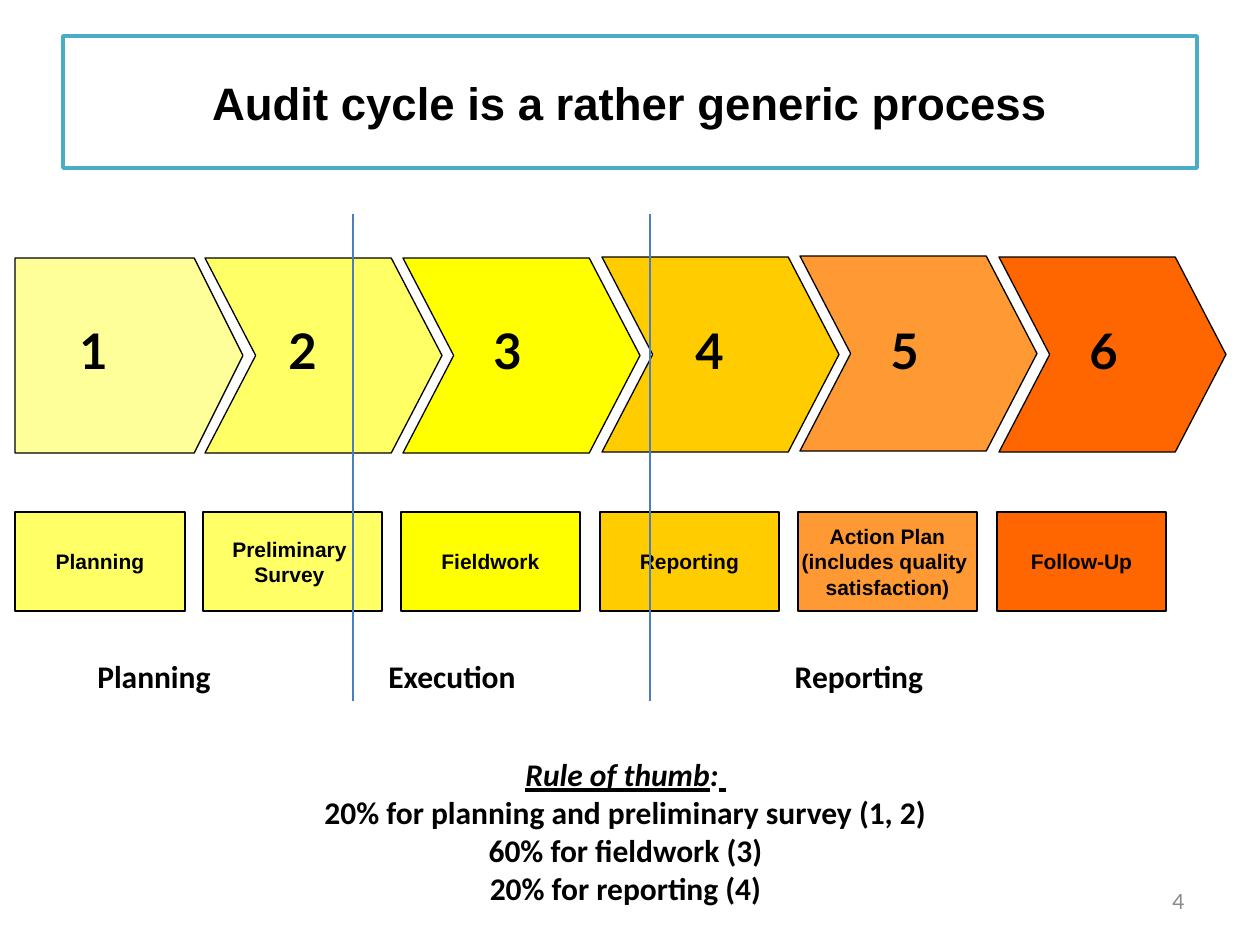
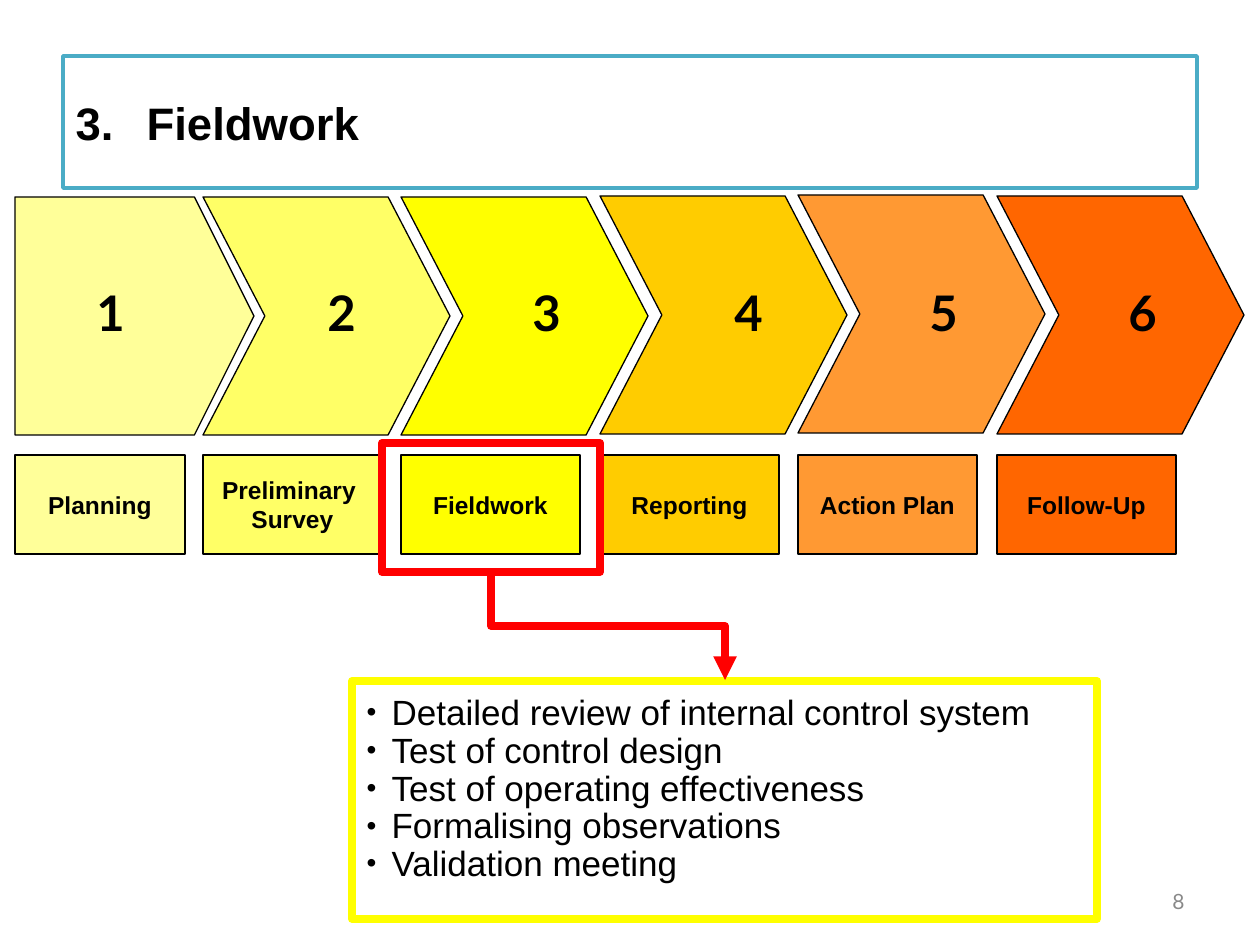
from dataclasses import dataclass
from typing import NamedTuple

from lxml.etree import SubElement
from pptx import Presentation
from pptx.dml.color import RGBColor
from pptx.enum.shapes import MSO_CONNECTOR as CONN, MSO_SHAPE as SHAPE
from pptx.enum.text import MSO_ANCHOR as ANCHOR, MSO_AUTO_SIZE as AUTO, PP_ALIGN as ALIGN
from pptx.oxml.ns import qn
from pptx.util import Emu, Pt

BLACK = RGBColor(0x00, 0x00, 0x00)
WHITE = RGBColor(0xFF, 0xFF, 0xFF)
GREY = RGBColor(0x89, 0x89, 0x89)
TEAL = RGBColor(0x4B, 0xAC, 0xC6)
BLUE = RGBColor(0x4B, 0x7E, 0xBC)
RED = RGBColor(0xFF, 0x00, 0x00)
YELLOW = RGBColor(0xFF, 0xFF, 0x00)
CREAM = RGBColor(0xFF, 0xFF, 0x99)
LEMON = RGBColor(0xFF, 0xFF, 0x66)
GOLD = RGBColor(0xFF, 0xCC, 0x00)
ORANGE = RGBColor(0xFF, 0x99, 0x33)
DEEP_ORANGE = RGBColor(0xFF, 0x66, 0x00)

EMU_PER_PX = 914400 / 126
TITLE_FONT = {"name": "Arial", "size": Pt(26), "bold": True}
NUMBER_FONT = {"name": "Lato", "size": Pt(28), "bold": True}
PAGE_FONT = {"name": "Lato", "size": Pt(12)}
PHASE_FONT = {"name": "Calibri", "size": Pt(18), "bold": True}
LIST_FONT = {"name": "Arial", "size": Pt(20)}


class Box(NamedTuple):
    left: int
    top: int
    width: int
    height: int


class Stage(NamedTuple):
    fill: RGBColor
    number_left: int
    rise: int = 0


@dataclass
class Flow:
    arrow_top: int
    arrow_height: int
    arrow_left: int
    arrow_widths: list[int]
    number_top: int
    number_shifts: list[int]
    label_top: int
    label_size: int
    last_label_width: int
    first_label_fill: RGBColor
    labels: list[list[str]]


STAGES = [
    Stage(CREAM, 67),
    Stage(LEMON, 276),
    Stage(YELLOW, 481),
    Stage(GOLD, 683, 1),
    Stage(ORANGE, 878, 2),
    Stage(DEEP_ORANGE, 1077, 1),
]


def px(value: float) -> Emu:
    return Emu(round(value * EMU_PER_PX))


def apply(target, values: dict) -> None:
    for name, value in values.items():
        setattr(target, name, value)


def place(sp, box: Box) -> None:
    apply(sp, {name: px(value) for name, value in box._asdict().items()})


def add_run(p, text: str, font: dict, color: RGBColor = BLACK) -> None:
    r = p.add_run()
    r.text = text
    apply(r.font, font)
    r.font.color.rgb = color


def write(tf, lines: list[str], font: dict, align=ALIGN.CENTER, color: RGBColor = BLACK) -> None:
    for i, line in enumerate(lines):
        p = tf.add_paragraph() if i else tf.paragraphs[0]
        p.alignment = align
        add_run(p, line, font, color)


def paint(sp, fill: RGBColor | None, line: RGBColor, width: float) -> None:
    if fill is None:
        sp.fill.background()
    else:
        sp.fill.solid()
        sp.fill.fore_color.rgb = fill
    sp.line.color.rgb = line
    sp.line.width = Pt(width)


def add_block(s, kind, box: Box, fill: RGBColor | None, line: RGBColor = BLACK, width: float = 0.75):
    sp = s.shapes.add_shape(kind, *map(px, box))
    sp.shadow.inherit = False
    paint(sp, fill, line, width)
    return sp


def add_text(s, box: Box, lines: list[str], font: dict, align=ALIGN.CENTER, color: RGBColor = BLACK, **frame):
    tf = s.shapes.add_textbox(*map(px, box)).text_frame
    apply(tf, {"word_wrap": True, **frame})
    write(tf, lines, font, align, color)
    return tf


def add_line(s, kind, start: tuple[int, int], end: tuple[int, int], color: RGBColor, width: float):
    cxn = s.shapes.add_connector(kind, *map(px, start + end))
    cxn.line.color.rgb = color
    cxn.line.width = Pt(width)
    SubElement(cxn._element.spPr, qn("a:effectLst"))
    return cxn


def add_down_elbow(s, start: tuple[int, int], end: tuple[int, int], color: RGBColor, width: float) -> None:
    mid_x, mid_y = (start[0] + end[0]) // 2, (start[1] + end[1]) // 2
    half_run, half_drop = (end[0] - start[0]) // 2, (end[1] - start[1]) // 2
    cxn = add_line(s, CONN.ELBOW, (mid_x + half_drop, mid_y - half_run),
                   (mid_x - half_drop, mid_y + half_run), color, width)
    cxn._element.spPr.find(qn("a:xfrm")).set("rot", "16200000")
    SubElement(cxn.line._get_or_add_ln(), qn("a:tailEnd"), type="triangle")


def set_bullet(p, indent: int, tag: str, size: str | None = None, **attrs: str) -> None:
    pPr = p._p.get_or_add_pPr()
    pPr.set("marL", str(px(indent)))
    pPr.set("indent", str(-px(indent)))
    if size:
        SubElement(pPr, qn("a:buSzPct"), val=size)
    SubElement(pPr, qn(tag), **attrs)


def start_slide(prs, layout: int, title: str, title_top: int, page: str, align):
    s = prs.slides.add_slide(prs.slide_layouts[layout])
    sp = s.shapes.title
    place(sp, Box(63, title_top, 1134, 132))
    paint(sp, WHITE, TEAL, 2)
    apply(sp.text_frame, {"auto_size": AUTO.NONE, "vertical_anchor": ANCHOR.MIDDLE})
    write(sp.text_frame, [title], TITLE_FONT, align)
    add_text(s, Box(903, 876, 294, 50), [page], PAGE_FONT, ALIGN.RIGHT, GREY,
             vertical_anchor=ANCHOR.MIDDLE)
    return s


def draw_flow(s, flow: Flow) -> None:
    label_font = {"name": "Arial", "size": Pt(flow.label_size), "bold": True}
    label_widths = [170, 179, 179, 179, 179, flow.last_label_width]
    for i, stage in enumerate(STAGES):
        step = 397 * (i - 1) // 2
        arrow_left, label_left = (flow.arrow_left + step, 203 + step) if i else (15, 15)
        arrow = add_block(s, SHAPE.CHEVRON if i else SHAPE.PENTAGON,
                          Box(arrow_left, flow.arrow_top - stage.rise, flow.arrow_widths[i], flow.arrow_height),
                          stage.fill)
        arrow.adjustments[0] = 0.26 if i else 0.25
        label = add_block(s, SHAPE.RECTANGLE, Box(label_left, flow.label_top, label_widths[i], 99),
                          stage.fill if i else flow.first_label_fill)
        apply(label.text_frame, {"word_wrap": False, "vertical_anchor": ANCHOR.MIDDLE})
        write(label.text_frame, flow.labels[i], label_font)
        add_text(s, Box(stage.number_left + flow.number_shifts[i], flow.number_top, 57, 72), [str(i + 1)],
                 NUMBER_FONT, ALIGN.LEFT, word_wrap=False, auto_size=AUTO.SHAPE_TO_FIT_TEXT)


def build_cycle(prs) -> None:
    s = start_slide(prs, 5, "Audit cycle is a rather generic process", 36, "4", ALIGN.CENTER)
    draw_flow(s, Flow(
        arrow_top=258, arrow_height=195, arrow_left=205, arrow_widths=[228, 237, 237, 237, 237, 227],
        number_top=314, number_shifts=[0] * 6,
        label_top=512, label_size=12, last_label_width=169, first_label_fill=LEMON,
        labels=[["Planning"], ["Preliminary ", "Survey "], ["Fieldwork"], ["Reporting"],
                ["Action Plan", "(includes quality ", "satisfaction)"], ["Follow-Up"]]))
    for x in (353, 650):
        add_line(s, CONN.STRAIGHT, (x, 214), (x, 701), BLUE, 0.75)
    for left, phase in ((35, "Planning"), (333, "Execution"), (740, "Reporting")):
        add_text(s, Box(left, 651, 238, 50), [phase], PHASE_FONT)
    tf = add_text(s, Box(25, 749, 1201, 166), ["Rule of thumb"], PHASE_FONT | {"italic": True, "underline": True})
    for text, underline in ((":", False), (" ", True)):
        add_run(tf.paragraphs[0], text, PHASE_FONT | {"italic": True, "underline": underline})
    for share in ("20% for planning and preliminary survey (1, 2)", "60% for fieldwork (3)",
                  "20% for reporting (4)"):
        p = tf.add_paragraph()
        p.alignment = ALIGN.CENTER
        add_run(p, share, PHASE_FONT)


def build_fieldwork(prs) -> None:
    s = start_slide(prs, 1, "Fieldwork", 56, "8", ALIGN.LEFT)
    set_bullet(s.shapes.title.text_frame.paragraphs[0], 71, "a:buAutoNum", type="arabicPeriod", startAt="3")
    draw_flow(s, Flow(
        arrow_top=197, arrow_height=238, arrow_left=203, arrow_widths=[239] + [247] * 5,
        number_top=276, number_shifts=[17] + [39] * 5,
        label_top=455, label_size=14, last_label_width=179, first_label_fill=CREAM,
        labels=[["Planning"], ["Preliminary ", "Survey"], ["Fieldwork"], ["Reporting"],
                ["Action Plan"], ["Follow-Up"]]))
    body = s.placeholders[1]
    place(body, Box(354, 689, 694, 204))
    tf = body.text_frame
    apply(tf, {"word_wrap": True, "auto_size": AUTO.NONE, "vertical_anchor": ANCHOR.TOP})
    write(tf, ["Detailed review of internal control system", "Test of control design",
               "Test of operating effectiveness", "Formalising observations", "Validation meeting"],
          LIST_FONT, ALIGN.LEFT)
    for p in tf.paragraphs:
        apply(p, {"line_spacing": 0.9, "space_before": Pt(0)})
        set_bullet(p, 25, "a:buChar", "80000", char="•")
    add_block(s, SHAPE.RECTANGLE, Box(382, 443, 218, 129), None, RED, 4.5)
    add_block(s, SHAPE.RECTANGLE, Box(352, 681, 745, 238), None, YELLOW, 4.5)
    add_down_elbow(s, (491, 572), (725, 680), RED, 4.5)


def main() -> None:
    prs = Presentation()
    apply(prs, {"slide_width": px(1260), "slide_height": px(945)})
    build_cycle(prs)
    build_fieldwork(prs)
    prs.save("out.pptx")


if __name__ == "__main__":
    main()
